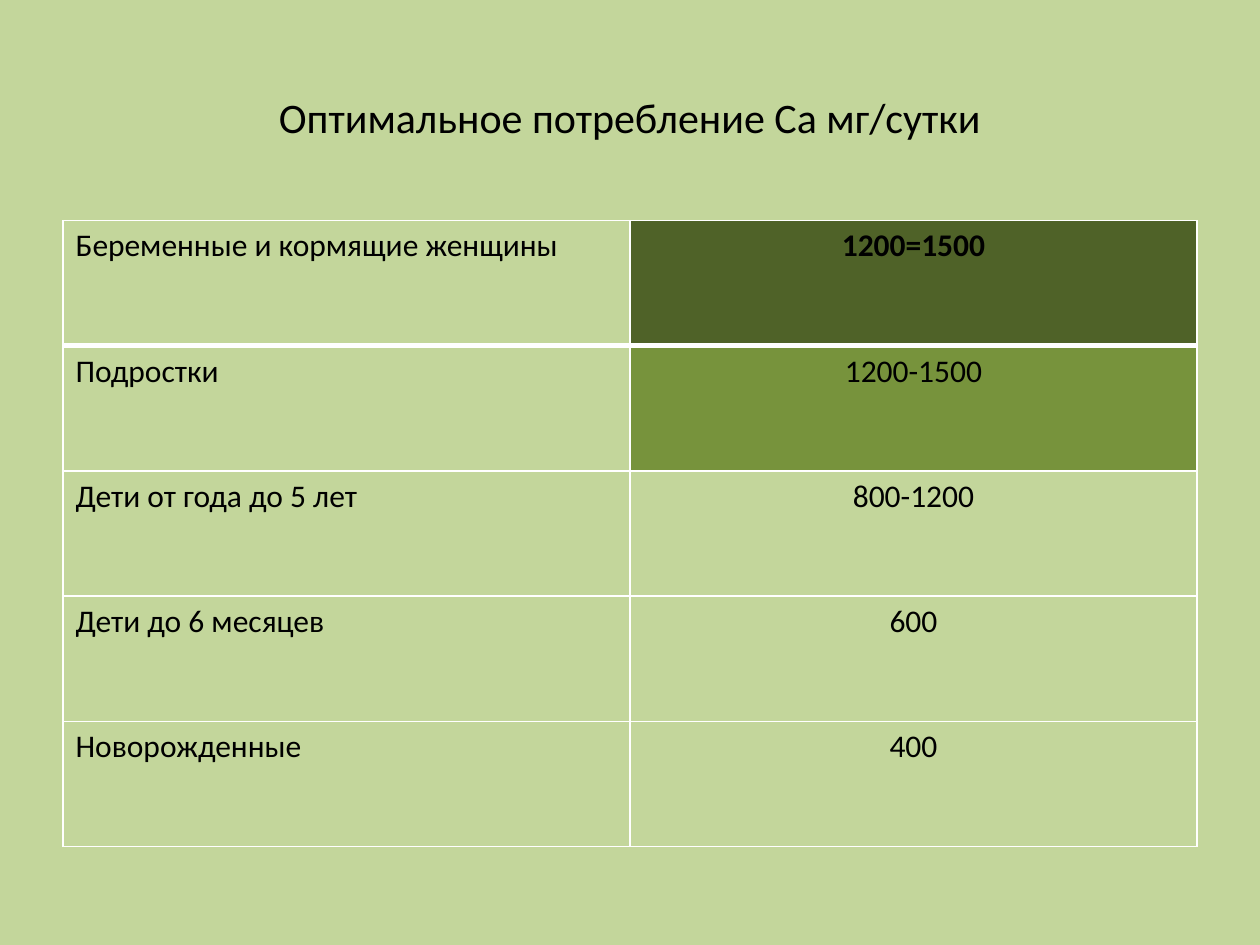
from lxml import etree
from pptx import Presentation
from pptx.dml.color import RGBColor
from pptx.enum.text import MSO_ANCHOR, PP_ALIGN
from pptx.oxml.ns import qn
from pptx.util import Pt

MID = MSO_ANCHOR.MIDDLE
LEFT, CENTER = PP_ALIGN.LEFT, PP_ALIGN.CENTER

# Content: label, daily dose, dose fill
TITLE = "Оптимальное потребление Са мг/сутки"
ROWS = [
    ("Беременные и кормящие женщины", "1200=1500", "dark"),
    ("Подростки", "1200-1500", "mid"),
    ("Дети от года до 5 лет", "800-1200", "pale"),
    ("Дети до 6 месяцев", "600", "pale"),
    ("Новорожденные", "400", "pale"),
]

THEME = {
    "font": "Calibri", "title": 24, "body": 18,
    "ink": "000000", "line": "FFFFFF",
    "pale": "C3D69B", "mid": "77933C", "dark": "4F6228",
    "thin": 1, "thick": 3,
}

# Layout in px, 100 px to the inch
PX = 9144
PAGE = (1000, 750)
HEAD = (50, 30, 900, 125)
GRID = (50, 175, 900, 497)


def emu(box):
    return [n * PX for n in box]


def tint(fill, name):
    fill.solid()
    fill.fore_color.rgb = RGBColor.from_string(THEME[name])


def write(frame, text, size, align, bold=False):
    para = frame.paragraphs[0]
    para.alignment = align
    run = para.add_run()
    run.text = text
    font = run.font
    font.name, font.size, font.bold = THEME["font"], Pt(THEME[size]), bold
    font.color.rgb = RGBColor.from_string(THEME["ink"])


def edge(cell, top, base):
    props = cell._tc.get_or_add_tcPr()
    sides = {"L": "thin", "R": "thin", "T": top, "B": base}
    for side, width in sides.items():
        line = etree.SubElement(props, qn(f"a:ln{side}"), w=str(Pt(THEME[width])))
        fill = etree.SubElement(line, qn("a:solidFill"))
        etree.SubElement(fill, qn("a:srgbClr"), val=THEME["line"])


# Page
deck = Presentation()
deck.slide_width, deck.slide_height = emu(PAGE)
slide = deck.slides.add_slide(deck.slide_layouts[6])
tint(slide.background.fill, "pale")

# Title
frame = slide.shapes.add_textbox(*emu(HEAD)).text_frame
frame.word_wrap = True
frame.vertical_anchor = MID
write(frame, TITLE, "title", CENTER)

# Table: the first row is set off by a thick rule
table = slide.shapes.add_table(len(ROWS), 2, *emu(GRID)).table
table.horz_banding = False
for r, (label, dose, shade) in enumerate(ROWS):
    table.rows[r].height = GRID[3] * PX // len(ROWS)
    parts = [(label, "pale", LEFT, False), (dose, shade, CENTER, r == 0)]
    for c, (text, fill, align, bold) in enumerate(parts):
        cell = table.cell(r, c)
        edge(cell, "thick" if r == 1 else "thin", "thick" if r == 0 else "thin")
        tint(cell.fill, fill)
        write(cell.text_frame, text, "body", align, bold)

deck.save("out.pptx")
